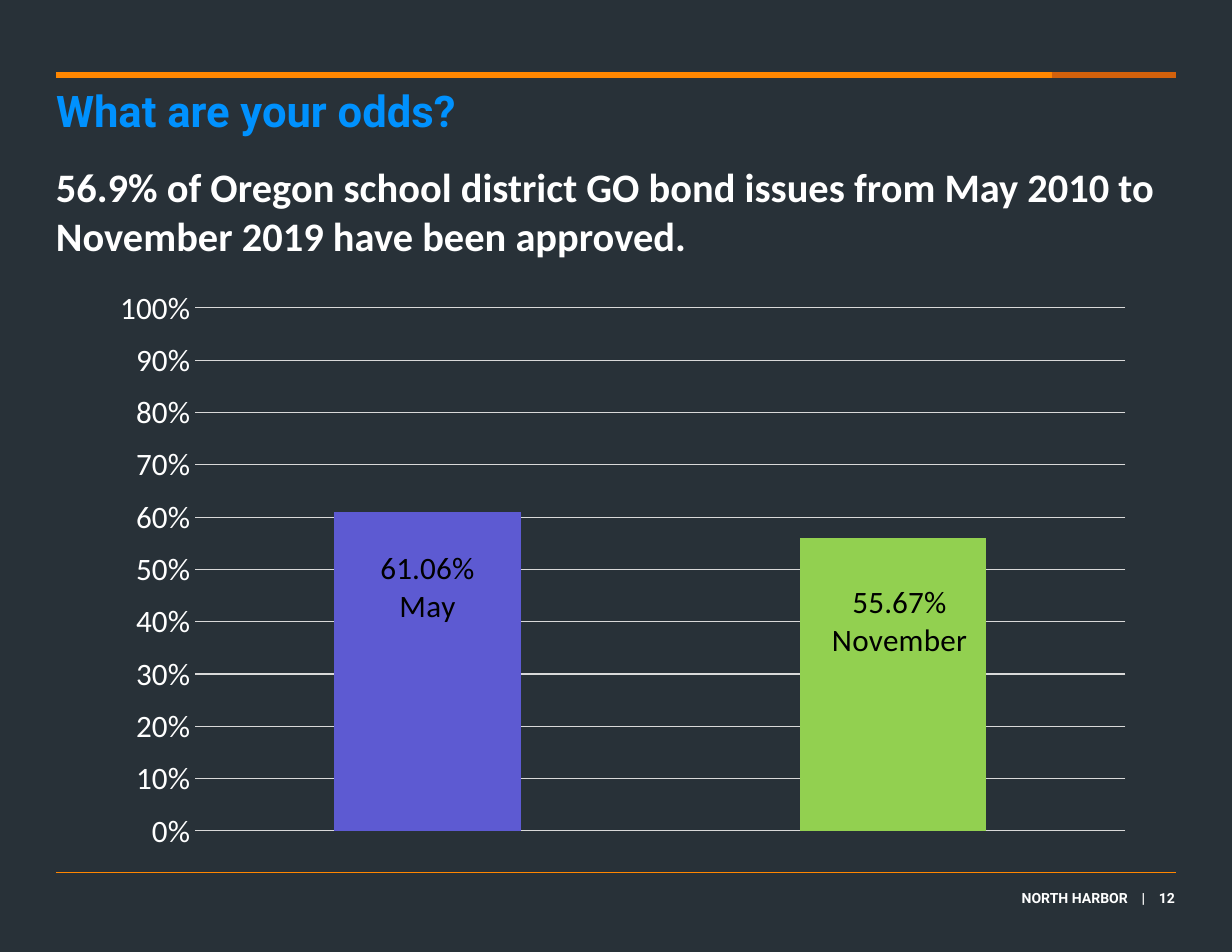
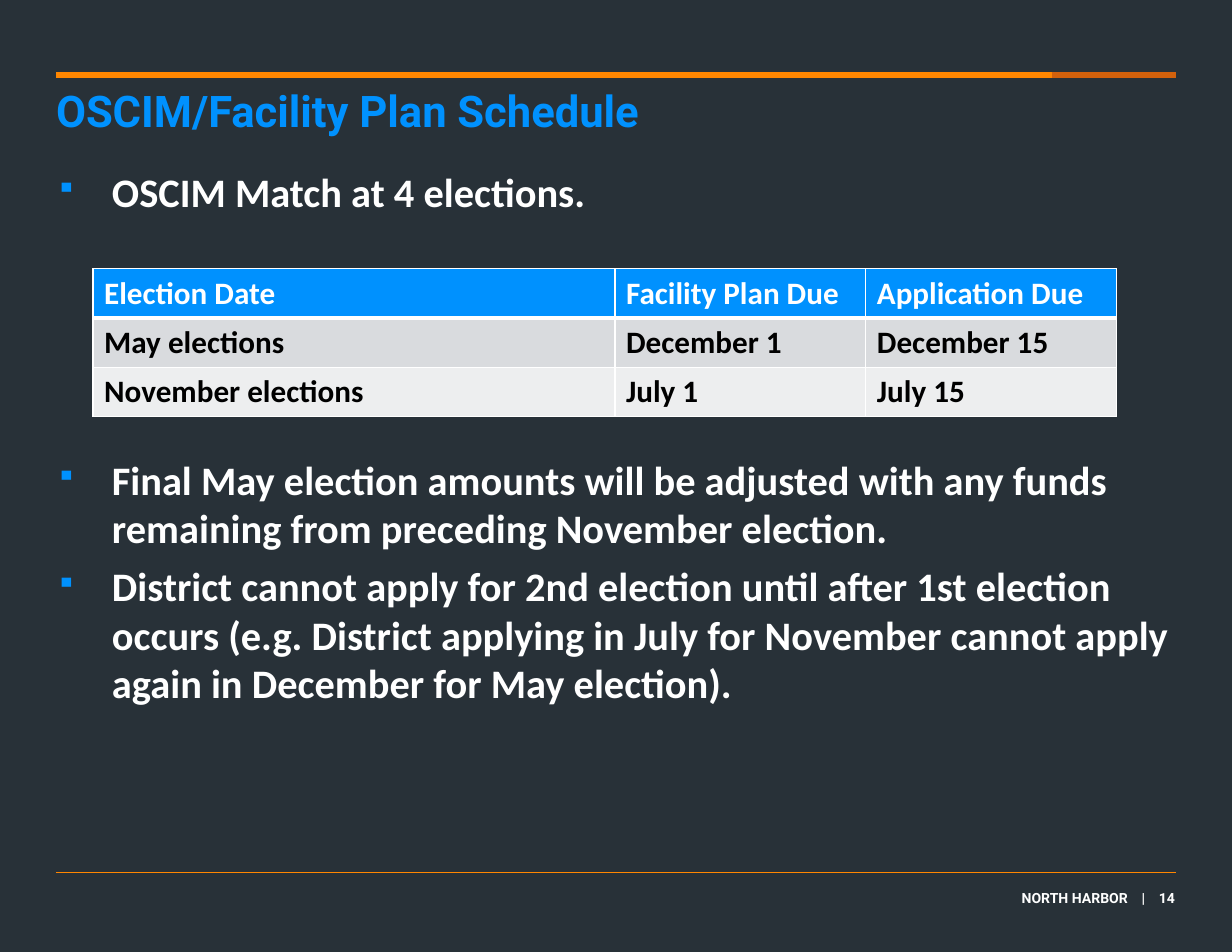
"""Build two slides on Oregon school bond odds and the OSCIM schedule."""
from lxml import etree
from pptx import Presentation, util as u
from pptx.chart import data as chart_data
from pptx.dml import color
from pptx.enum import chart as chart_enum, shapes, text
from pptx.oxml import parse_xml
from pptx.oxml.ns import nsdecls, qn

WIDTH, HEIGHT, MARGIN = 11, 8.5, 0.5
RIGHT = WIDTH - MARGIN
CONTENT = WIDTH - 2 * MARGIN
HEADING_FONT, BODY_FONT = "Roboto", "Calibri"
DARK, WHITE, BLACK, BLUE, ORANGE = "283138", "FFFFFF", "000000", "0091FE", "FF8600"
FIRM = "NORTH HARBOR"

RULES = [
    (MARGIN, 0.67, ORANGE, 3.5),
    (9.39, 0.67, "D2610C", 3.5),
    (MARGIN, 7.79, ORANGE, 1),
]
FOOTER_TABS = [(2.81, "r"), (2.95, "ctr"), (3.23, "r")]

ODDS_TITLE = "What are your odds?"
ODDS_TEXT = ("56.9% of Oregon school district GO bond issues from May 2010 to "
             "November 2019 have been approved.")
ODDS = [
    ("1", 0.61, "61.06%\nMay", "5D5AD2", (0, 0.29)),
    ("2", 0.56, "55.67%\nNovember", "92D050", (0.06, 0.36)),
]
CHART_WIDTH, CHART_HEIGHT = 9.36, 5.22
PLOT_AREA = {"x": 0.86, "y": 0.27, "w": 8.31, "h": 4.67}

SCHEDULE_TITLE = "OSCIM/Facility Plan Schedule"
BULLETS = [
    ("OSCIM Match at 4 elections.", 154),
    ("Final May election amounts will be adjusted with any funds remaining "
     "from preceding November election.", 6),
    ("District cannot apply for 2nd election until after 1st election occurs "
     "(e.g. District applying in July for November cannot apply again in "
     "December for May election).", 6),
]
SCHEDULE = [
    ("Election Date", "Facility Plan Due", "Application Due"),
    ("May elections", "December 1", "December 15"),
    ("November elections", "July 1", "July 15"),
]
COLUMNS = [4.66, 2.24, 2.24]
ROW_HEIGHT = 0.44
ROW_STYLES = [(BLUE, WHITE), ("D9DBDE", BLACK), ("EDEEEF", BLACK)]


def rgb(value):
    return color.RGBColor.from_string(value)


def inches(*values):
    return [u.Inches(value) for value in values]


def format_font(font, size, fill, name=BODY_FONT, bold=True):
    font.size, font.name, font.bold = u.Pt(size), name, bold
    font.color.rgb = rgb(fill)


def format_runs(frame, *style, **options):
    for paragraph in frame.paragraphs:
        for run in paragraph.runs:
            format_font(run.font, *style, **options)


def clear_frame(frame):
    frame.margin_left = frame.margin_right = frame.margin_top = frame.margin_bottom = 0
    frame.word_wrap = True
    frame.auto_size = text.MSO_AUTO_SIZE.NONE
    frame.vertical_anchor = text.MSO_ANCHOR.TOP


def add_text(slide, box, words):
    frame = slide.shapes.add_textbox(*inches(*box)).text_frame
    clear_frame(frame)
    frame.text = words
    return frame


def add_rule(slide, left, top, fill, weight):
    rule = slide.shapes.add_connector(
        shapes.MSO_CONNECTOR.STRAIGHT, *inches(left, top, RIGHT, top))
    rule.line.color.rgb = rgb(fill)
    rule.line.width = u.Pt(weight)
    etree.SubElement(rule._element.spPr, qn("a:effectLst"))


def add_footer(slide, number):
    frame = add_text(slide, (7.26, 7.94, 3.23, 0.15), f"\t{FIRM}\t|\t{number}")
    format_runs(frame, 9, WHITE, name=HEADING_FONT)
    properties = frame.paragraphs[0]._p.get_or_add_pPr()
    tabs = etree.SubElement(properties, qn("a:tabLst"))
    for position, alignment in FOOTER_TABS:
        etree.SubElement(tabs, qn("a:tab"), pos=str(u.Inches(position)), algn=alignment)


def add_slide(presentation, title, number):
    slide = presentation.slides.add_slide(presentation.slide_layouts[5])
    slide.background.fill.solid()
    slide.background.fill.fore_color.rgb = rgb(DARK)
    for rule in RULES:
        add_rule(slide, *rule)
    add_footer(slide, number)
    heading = slide.shapes.title
    heading.left, heading.top, heading.width, heading.height = inches(
        MARGIN, 0.75, CONTENT, 0.44)
    clear_frame(heading.text_frame)
    heading.text_frame.text = title
    heading.text_frame.paragraphs[0].alignment = text.PP_ALIGN.LEFT
    format_runs(heading.text_frame, 28, BLUE, name=HEADING_FONT)
    return slide


def manual_layout(parts, inner=False):
    target = '<c:layoutTarget val="inner"/>' if inner else ""
    modes = '<c:xMode val="edge"/><c:yMode val="edge"/>' if inner else ""
    totals = {"x": CHART_WIDTH, "w": CHART_WIDTH, "y": CHART_HEIGHT, "h": CHART_HEIGHT}
    values = "".join(f'<c:{name} val="{length / totals[name]:.4f}"/>'
                     for name, length in parts.items())
    return parse_xml(f'<c:layout {nsdecls("c")}><c:manualLayout>{target}{modes}{values}'
                     '</c:manualLayout></c:layout>')


def add_odds_chart(slide):
    data = chart_data.CategoryChartData(number_format="0.00%")
    data.categories = [row[0] for row in ODDS]
    data.add_series("Series 1", [row[1] for row in ODDS])
    chart = slide.shapes.add_chart(
        chart_enum.XL_CHART_TYPE.COLUMN_CLUSTERED,
        *inches(0.88, 2.48, CHART_WIDTH, CHART_HEIGHT), data).chart
    chart.has_legend = chart.has_title = False
    format_font(chart.font, 20, WHITE, bold=False)
    chart.category_axis.visible = False
    axis = chart.value_axis
    axis.minimum_scale, axis.maximum_scale, axis.major_unit = 0, 1, 0.1
    axis.major_tick_mark = axis.minor_tick_mark = chart_enum.XL_TICK_MARK.NONE
    axis.tick_labels.number_format = "0%"
    axis.tick_labels.number_format_is_linked = False
    format_font(axis.tick_labels.font, 20, WHITE, bold=False)
    axis.format.line.fill.background()
    grid = axis.major_gridlines.format.line
    grid.color.rgb, grid.width = rgb("D9D9D9"), u.Pt(0.75)

    plot = chart.plots[0]
    plot.gap_width, plot.vary_by_categories = 150, False
    series = plot.series[0]
    series.format.fill.solid()
    series.format.fill.fore_color.rgb = rgb("838D9B")
    for index, (_, _, label, fill, (shift_x, shift_y)) in enumerate(ODDS):
        point = series.points[index]
        point.format.fill.solid()
        point.format.fill.fore_color.rgb = rgb(fill)
        point.data_label.text_frame.text = label
        format_runs(point.data_label.text_frame, 20, BLACK, bold=False)
        point.data_label.position = chart_enum.XL_LABEL_POSITION.INSIDE_END
        element = chart._chartSpace.xpath(".//c:dLbl")[index]
        for old in element.findall(qn("c:layout")):
            element.remove(old)
        element.insert(1, manual_layout({"x": shift_x, "y": shift_y}))
    for leader in chart._chartSpace.xpath(".//c:showLeaderLines"):
        leader.set("val", "0")
    area = chart._chartSpace.xpath(".//c:plotArea")[0]
    for old in area.findall(qn("c:layout")):
        area.remove(old)
    area.insert(0, manual_layout(PLOT_AREA, inner=True))


def add_bullets(slide):
    frame = add_text(slide, (MARGIN, 1.49, CONTENT, 6.06),
                     "\n".join(words for words, _ in BULLETS))
    format_runs(frame, 26, WHITE)
    for paragraph, (_, gap) in zip(frame.paragraphs, BULLETS):
        paragraph.space_after = u.Pt(gap)
        properties = paragraph._p.get_or_add_pPr()
        properties.set("marL", str(u.Inches(0.5)))
        properties.set("indent", str(-u.Inches(0.5)))
        bullet_color = etree.SubElement(properties, qn("a:buClr"))
        etree.SubElement(bullet_color, qn("a:srgbClr"), val=BLUE)
        etree.SubElement(properties, qn("a:buSzPct"), val="70000")
        etree.SubElement(properties, qn("a:buChar"), char="▪")


def set_borders(cell, top, bottom):
    properties = cell._tc.get_or_add_tcPr()
    sides = {"lnL": 1, "lnR": 1, "lnT": top, "lnB": bottom}
    for index, (side, weight) in enumerate(sides.items()):
        properties.insert(index, parse_xml(
            f'<a:{side} {nsdecls("a")} w="{u.Pt(weight)}"><a:solidFill>'
            f'<a:srgbClr val="{WHITE}"/></a:solidFill></a:{side}>'))


def add_schedule(slide):
    table = slide.shapes.add_table(
        len(SCHEDULE), len(COLUMNS),
        *inches(0.83, 2.4, sum(COLUMNS), ROW_HEIGHT * len(SCHEDULE))).table
    for column, width in zip(table.columns, COLUMNS):
        column.width = u.Inches(width)
    for row, (words, (fill, ink)) in enumerate(zip(SCHEDULE, ROW_STYLES)):
        table.rows[row].height = u.Inches(ROW_HEIGHT)
        for column, word in enumerate(words):
            cell = table.cell(row, column)
            cell.text_frame.text = word
            format_runs(cell.text_frame, 20, ink)
            cell.fill.solid()
            cell.fill.fore_color.rgb = rgb(fill)
            set_borders(cell, 3 if row == 1 else 1, 3 if row == 0 else 1)


def main():
    presentation = Presentation()
    presentation.slide_width, presentation.slide_height = inches(WIDTH, HEIGHT)

    odds = add_slide(presentation, ODDS_TITLE, 12)
    statement = add_text(odds, (MARGIN, 1.45, CONTENT, 1.05), ODDS_TEXT)
    statement.paragraphs[0].space_after = u.Pt(6)
    format_runs(statement, 26, WHITE)
    add_odds_chart(odds)

    schedule = add_slide(presentation, SCHEDULE_TITLE, 14)
    add_bullets(schedule)
    add_schedule(schedule)

    presentation.save("out.pptx")


if __name__ == "__main__":
    main()
